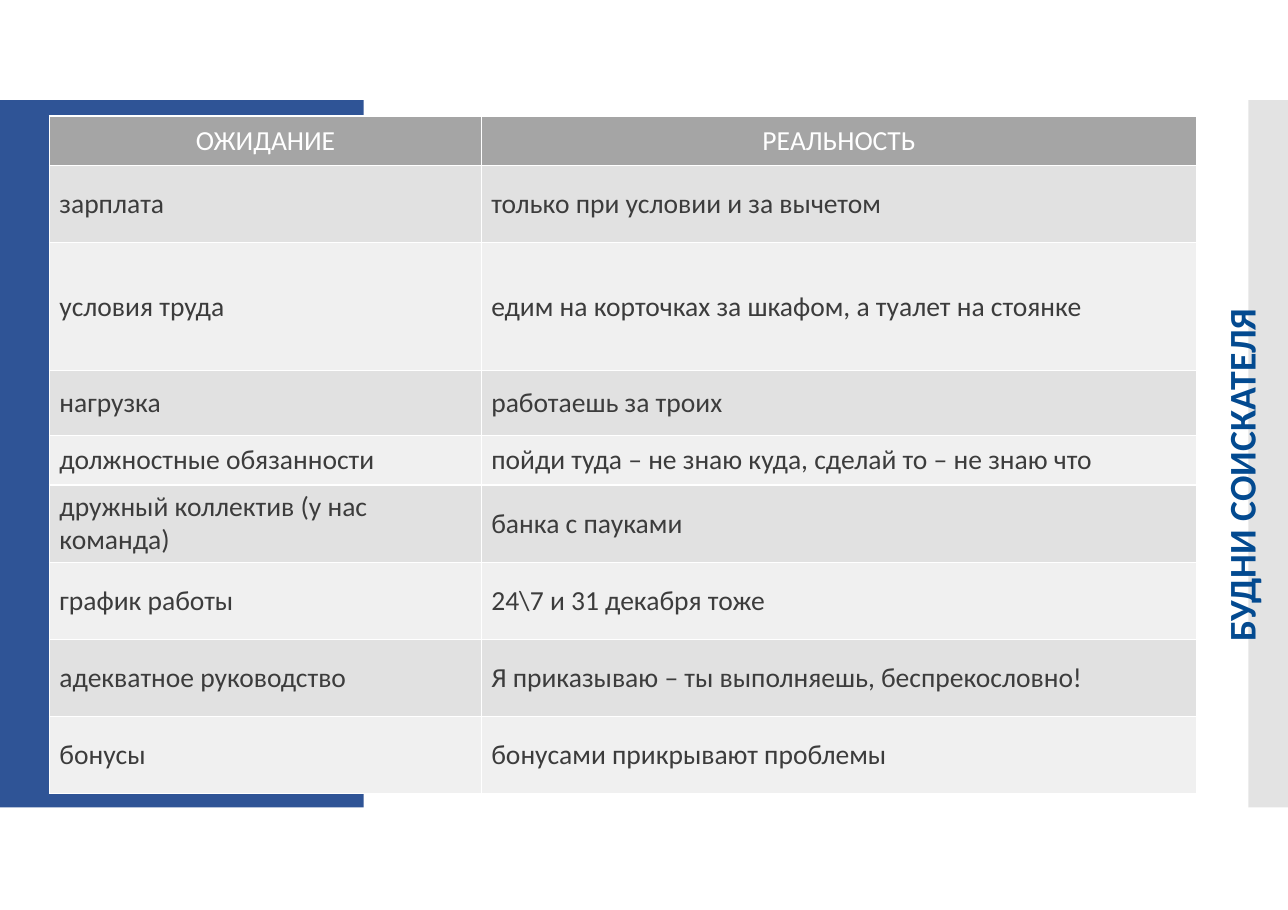
from dataclasses import dataclass

from lxml import etree
from pptx import Presentation
from pptx.dml.color import RGBColor
from pptx.enum.shapes import MSO_SHAPE
from pptx.enum.text import MSO_ANCHOR, PP_ALIGN
from pptx.oxml.ns import qn
from pptx.slide import Slide
from pptx.table import _Cell
from pptx.text.text import _Paragraph
from pptx.util import Inches, Pt

RECTANGLE = MSO_SHAPE.RECTANGLE
MIDDLE = MSO_ANCHOR.MIDDLE
LEFT, CENTER = PP_ALIGN.LEFT, PP_ALIGN.CENTER

PAGE_WIDTH, PAGE_HEIGHT = Inches(11.69), Inches(8.26)
ROW_UNIT = Inches(0.05)
COLUMN_UNIT = Inches(0.01)


@dataclass(frozen=True)
class Theme:
    font: str = "Calibri"
    table_size: float = 18
    heading_size: float = 24.6
    border_width: float = 1
    blue: str = "2F5496"
    heading: str = "034A90"
    side_grey: str = "C8C8C8"
    header_fill: str = "A5A5A5"
    band_fills: tuple[str, str] = ("E1E1E1", "F0F0F0")
    white: str = "FFFFFF"
    body_text: str = "3C3C3C"


@dataclass(frozen=True)
class Area:
    left: float
    top: float
    width: float
    height: float

    def on_page(self) -> tuple[int, int, int, int]:
        return (
            round(self.left * PAGE_WIDTH),
            round(self.top * PAGE_HEIGHT),
            round(self.width * PAGE_WIDTH),
            round(self.height * PAGE_HEIGHT),
        )


@dataclass(frozen=True)
class Panel:
    area: Area
    color: str
    opacity: int


@dataclass(frozen=True)
class TableRow:
    units: float
    expectation: str
    reality: str


THEME = Theme()
PANELS = (
    Panel(Area(0, 0.11, 0.2823, 0.7772), THEME.blue, 100),
    Panel(Area(0.9692, 0.11, 0.0308, 0.7772), THEME.side_grey, 50),
)
TABLE_AREA = Area(0.0385, 0.1275, 0.8905, 0.7446)
HEADING_AREA = Area(0.8092, 0.4685, 0.308, 0.0617)
COLUMN_UNITS = (392, 649)
ROWS = (
    TableRow(9, "ОЖИДАНИЕ", "РЕАЛЬНОСТЬ"),
    TableRow(14, "зарплата", "только при условии и за вычетом"),
    TableRow(23.2, "условия труда", "едим на корточках за шкафом, а туалет на стоянке"),
    TableRow(11.8, "нагрузка", "работаешь за троих"),
    TableRow(9, "должностные обязанности", "пойди туда – не знаю куда, сделай то – не знаю что"),
    TableRow(14, "дружный коллектив (у нас команда)", "банка с пауками"),
    TableRow(14, "график работы", "24\\7 и 31 декабря тоже"),
    TableRow(14, "адекватное руководство", "Я приказываю – ты выполняешь, беспрекословно!"),
    TableRow(14, "бонусы", "бонусами прикрывают проблемы"),
)


def format_runs(para: _Paragraph, size: float, color: str, bold: bool) -> None:
    for span in para.runs:
        span.font.name = THEME.font
        span.font.size = Pt(size)
        span.font.bold = bold
        span.font.color.rgb = RGBColor.from_string(color)


def draw_panel(page: Slide, panel: Panel) -> None:
    shape = page.shapes.add_shape(RECTANGLE, *panel.area.on_page())
    shape.shadow.inherit = False
    shape.line.fill.background()
    shape.fill.solid()
    shape.fill.fore_color.rgb = RGBColor.from_string(panel.color)
    if panel.opacity < 100:
        color = shape.fill._xPr.find(f".//{qn('a:srgbClr')}")
        etree.SubElement(color, qn("a:alpha"), val=str(panel.opacity * 1000))


def draw_borders(cell: _Cell) -> None:
    properties = cell._tc.get_or_add_tcPr()
    for side in ("L", "R", "T", "B"):
        line = etree.SubElement(properties, qn(f"a:ln{side}"), w=str(Pt(THEME.border_width)))
        fill = etree.SubElement(line, qn("a:solidFill"))
        etree.SubElement(fill, qn("a:srgbClr"), val=THEME.white)


def fill_cell(cell: _Cell, text: str, row_index: int) -> None:
    is_header = row_index == 0
    fill = THEME.header_fill if is_header else THEME.band_fills[(row_index - 1) % 2]
    draw_borders(cell)
    cell.fill.solid()
    cell.fill.fore_color.rgb = RGBColor.from_string(fill)
    cell.vertical_anchor = MIDDLE
    cell.margin_left = cell.margin_right = Inches(0.09)
    cell.margin_top = cell.margin_bottom = Inches(0.04)
    cell.text_frame.text = text
    para = cell.text_frame.paragraphs[0]
    para.alignment = CENTER if is_header else LEFT
    format_runs(para, THEME.table_size, THEME.white if is_header else THEME.body_text, False)


def draw_table(page: Slide) -> None:
    frame = page.shapes.add_table(len(ROWS), len(COLUMN_UNITS), *TABLE_AREA.on_page())
    table = frame.table
    for column, units in zip(table.columns, COLUMN_UNITS):
        column.width = units * COLUMN_UNIT
    for row_index, row in enumerate(ROWS):
        table.rows[row_index].height = round(row.units * ROW_UNIT)
        for column_index, text in enumerate((row.expectation, row.reality)):
            fill_cell(table.cell(row_index, column_index), text, row_index)


def draw_heading(page: Slide) -> None:
    box = page.shapes.add_textbox(*HEADING_AREA.on_page())
    box.rotation = 270
    box.text_frame.word_wrap = True
    box.text_frame.text = "БУДНИ СОИСКАТЕЛЯ"
    format_runs(box.text_frame.paragraphs[0], THEME.heading_size, THEME.heading, True)


def main() -> None:
    deck = Presentation()
    deck.slide_width, deck.slide_height = PAGE_WIDTH, PAGE_HEIGHT
    page = deck.slides.add_slide(deck.slide_layouts[6])
    for panel in PANELS:
        draw_panel(page, panel)
    draw_table(page)
    draw_heading(page)
    deck.save("out.pptx")


if __name__ == "__main__":
    main()
